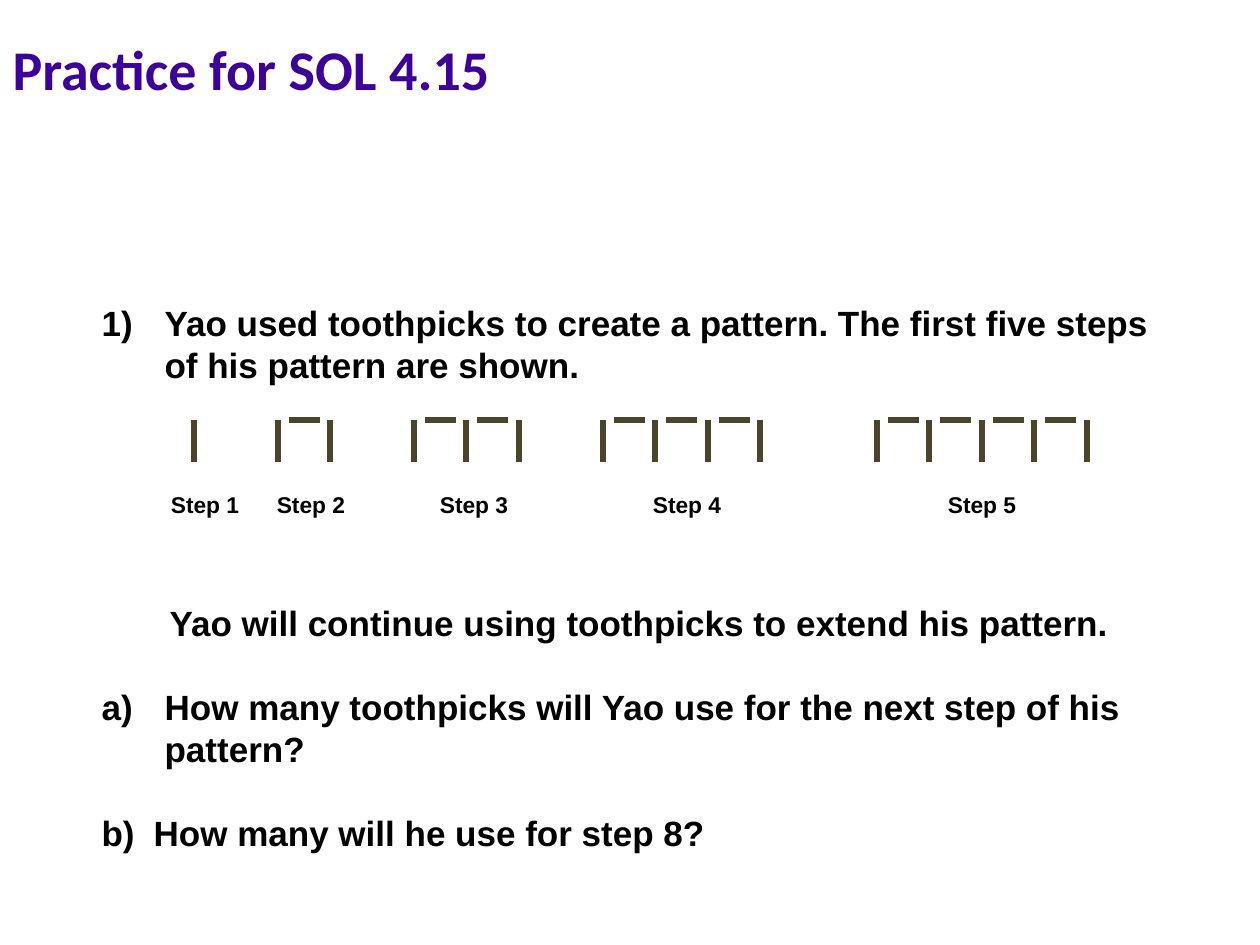
from pptx import Presentation
from pptx.dml.color import RGBColor
from pptx.enum.shapes import MSO_CONNECTOR as Conn
from pptx.enum.text import MSO_ANCHOR as Anchor, MSO_AUTO_SIZE as Fit, PP_ALIGN as Align
from pptx.oxml.ns import qn
from pptx.util import Emu, Pt
from lxml.etree import SubElement

COLORS = {"title": "3E009A", "text": "000000", "pick": "4A452A"}
LINE = 42  # height of one line of body text
PITCH = 105  # two post gaps

# left post, label centre
STEPS = [(194, 205), (278, 311), (414, 474), (603, 687), (877, 982)]

# text, number style, start, indent, space before
TASKS = [
    ("Yao used toothpicks to create a pattern. The first five steps "
     "of his pattern are shown.", "arabicParenR", 1, 63, 0),
    ("Yao will continue using toothpicks to extend his pattern.",
     None, 0, 68, 216),
    ("How many toothpicks will Yao use for the next step of his pattern?",
     "alphaLcParenR", 1, 63, LINE),
    ("How many will he use for step 8?", "alphaLcParenR", 2, 52, LINE),
]


def px(n):
    return Emu(round(n * 914400 / 126))


def place(shape, box):
    shape.left, shape.top, shape.width, shape.height = map(px, box)


def style(para, face, size, color):
    font = para.font
    font.name, font.size, font.bold = face, Pt(size), True
    font.color.rgb = RGBColor.from_string(COLORS[color])


def add_title(slide, box):
    title = slide.shapes.title
    place(title, box)
    frame = title.text_frame
    frame.text = "Practice for SOL 4.15"
    frame.auto_size = Fit.NONE
    frame.vertical_anchor = Anchor.MIDDLE
    para = frame.paragraphs[0]
    para.alignment = Align.LEFT
    style(para, "Calibri", 32, "title")


def number(para, kind, start, indent):
    """Give a paragraph its indent and its number, or none."""
    props = para._p.get_or_add_pPr()
    props.set("marL", str(px(indent)))
    props.set("indent", str(-px(indent) if kind else 0))
    if kind:
        SubElement(props, qn("a:buFont"), typeface="+mj-lt")
        SubElement(props, qn("a:buAutoNum"), type=kind, startAt=str(start))
    else:
        SubElement(props, qn("a:buNone"))


def add_tasks(slide, box):
    body = slide.placeholders[1]
    place(body, box)
    frame = body.text_frame
    frame.auto_size = Fit.NONE
    frame.vertical_anchor = Anchor.TOP
    frame.margin_top = px(7)
    for i, (text, kind, start, indent, gap) in enumerate(TASKS):
        para = frame.add_paragraph() if i else frame.paragraphs[0]
        para.text = text
        para.line_spacing = px(LINE)
        para.space_before = px(gap)
        number(para, kind, start, indent)
        style(para, "Arial", 20, "text")


def add_pick(slide, x1, y1, x2, y2):
    pick = slide.shapes.add_connector(Conn.STRAIGHT, *map(px, (x1, y1, x2, y2)))
    pick.line.color.rgb = RGBColor.from_string(COLORS["pick"])
    pick.line.width = Pt(3)
    SubElement(pick._element.spPr, qn("a:effectLst"))


def add_label(slide, text, box):
    label = slide.shapes.add_textbox(*map(px, box))
    frame = label.text_frame
    frame.margin_left = frame.margin_right = 0
    frame.margin_top = frame.margin_bottom = 0
    frame.word_wrap = True
    frame.vertical_anchor = Anchor.MIDDLE
    frame.text = text
    para = frame.paragraphs[0]
    para.alignment = Align.CENTER
    style(para, "Arial", 13, "text")


def add_steps(slide, top, tall):
    """Draw each step as n posts with n - 1 caps between them."""
    for n, (left, mid) in enumerate(STEPS, 1):
        for i in range(n):
            x = left + i * PITCH // 2
            add_pick(slide, x, top, x, top + tall)
            if i < n - 1:
                add_pick(slide, x + 11, top, x + 42, top)
        add_label(slide, f"Step {n}", (mid - 50, top + 69, 100, 30))


def main():
    deck = Presentation()
    deck.slide_width, deck.slide_height = px(1260), px(945)
    slide = deck.slides.add_slide(deck.slide_layouts[1])
    add_title(slide, (0, 5, 1218, 126))
    add_tasks(slide, (89, 294, 1081, 571))
    add_steps(slide, 420, 42)
    deck.save("out.pptx")


if __name__ == "__main__":
    main()
